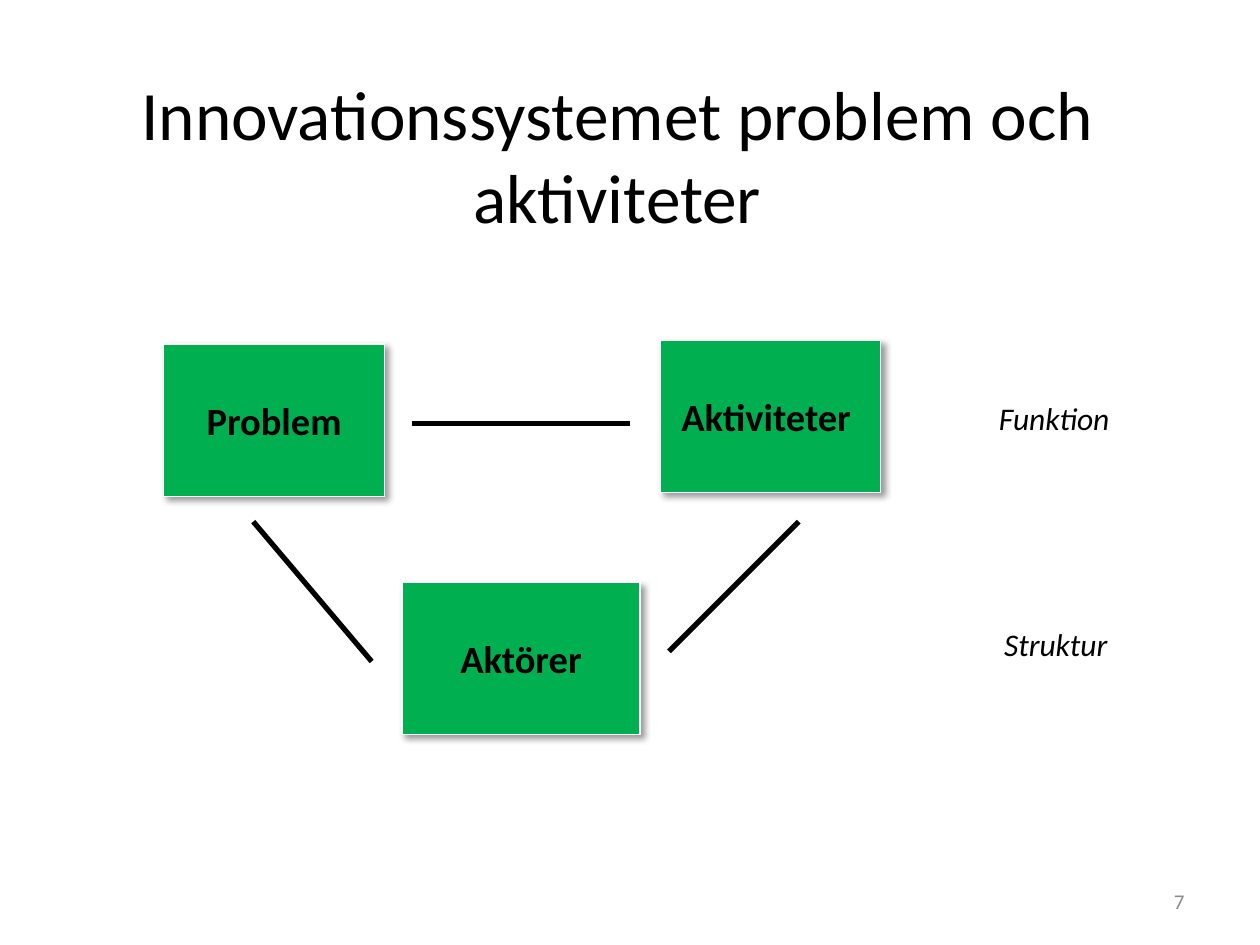
"""Build the slide on problems, activities and actors in the innovation system."""
from lxml import etree
from pptx import Presentation
from pptx.dml.color import RGBColor
from pptx.enum.shapes import MSO_CONNECTOR, MSO_SHAPE
from pptx.enum.text import MSO_ANCHOR, PP_ALIGN
from pptx.oxml.ns import qn
from pptx.util import Inches, Pt

LEFT, CENTER, RIGHT = PP_ALIGN.LEFT, PP_ALIGN.CENTER, PP_ALIGN.RIGHT
TOP, MIDDLE = MSO_ANCHOR.TOP, MSO_ANCHOR.MIDDLE
RECT, STRAIGHT = MSO_SHAPE.RECTANGLE, MSO_CONNECTOR.STRAIGHT
COLORS = {"green": "00B050", "black": "000000", "white": "FFFFFF", "grey": "8C8C8C"}


def rgb(name):
    return RGBColor.from_string(COLORS[name])


def write(sp, text, align, anchor, color="black", **font):
    tf = sp.text_frame
    tf.word_wrap = True
    tf.vertical_anchor = anchor
    p = tf.paragraphs[0]
    p.alignment = align
    r = p.add_run()
    r.text = text
    r.font.name = "Calibri"
    r.font.color.rgb = rgb(color)
    for key, value in font.items():
        setattr(r.font, key, value)


prs = Presentation()
prs.slide_width, prs.slide_height = Inches(10), Inches(7.5)
s = prs.slides.add_slide(prs.slide_layouts[6])

label = {"size": Pt(18), "italic": True}
texts = [
    ("Innovationssystemet problem och aktiviteter", 0.4, 0.6, 9, 1.25,
     CENTER, MIDDLE, {"size": Pt(39.6)}),
    ("7", 7.17, 6.95, 2.33, 0.4, RIGHT, MIDDLE, {"size": Pt(12), "color": "grey"}),
    ("Funktion", 7.83, 3.12, 1.38, 0.4, LEFT, TOP, label),
    ("Struktur", 7.87, 4.91, 1.38, 0.4, LEFT, TOP, label),
]
for text, x, y, w, h, align, anchor, font in texts:
    sp = s.shapes.add_textbox(Inches(x), Inches(y), Inches(w), Inches(h))
    write(sp, text, align, anchor, **font)

boxes = [
    ("Problem", 1.3, 2.73, 1.75),
    ("Aktiviteter ", 5.24, 2.7, 1.75),
    ("Aktörer", 3.19, 4.62, 1.89),
]
shadow = {"blurRad": Pt(4), "dist": Pt(3), "dir": 45 * 60000, "rotWithShape": 0}
for text, x, y, w in boxes:
    sp = s.shapes.add_shape(RECT, Inches(x), Inches(y), Inches(w), Inches(1.21))
    sp.fill.solid()
    sp.fill.fore_color.rgb = rgb("green")
    sp.line.color.rgb = rgb("white")
    sp.line.width = Pt(0.75)
    sp.shadow.inherit = False
    effects = sp.element.spPr.find(qn("a:effectLst"))
    outer = etree.SubElement(effects, qn("a:outerShdw"))
    for key, value in shadow.items():
        outer.set(key, str(value))
    tint = etree.SubElement(outer, qn("a:srgbClr"), val=COLORS["black"])
    etree.SubElement(tint, qn("a:alpha"), val="40000")
    write(sp, text, CENTER, MIDDLE, size=Pt(22), bold=True)

lines = [
    (5.31, 5.17, 6.34, 4.14),
    (2.95, 5.25, 2.01, 4.14),
    (3.27, 3.36, 5, 3.36),
]
for ends in lines:
    line = s.shapes.add_connector(STRAIGHT, *map(Inches, ends))
    line.line.color.rgb = rgb("black")
    line.line.width = Pt(3)
    etree.SubElement(line.element.spPr, qn("a:effectLst"))

prs.save("out.pptx")
